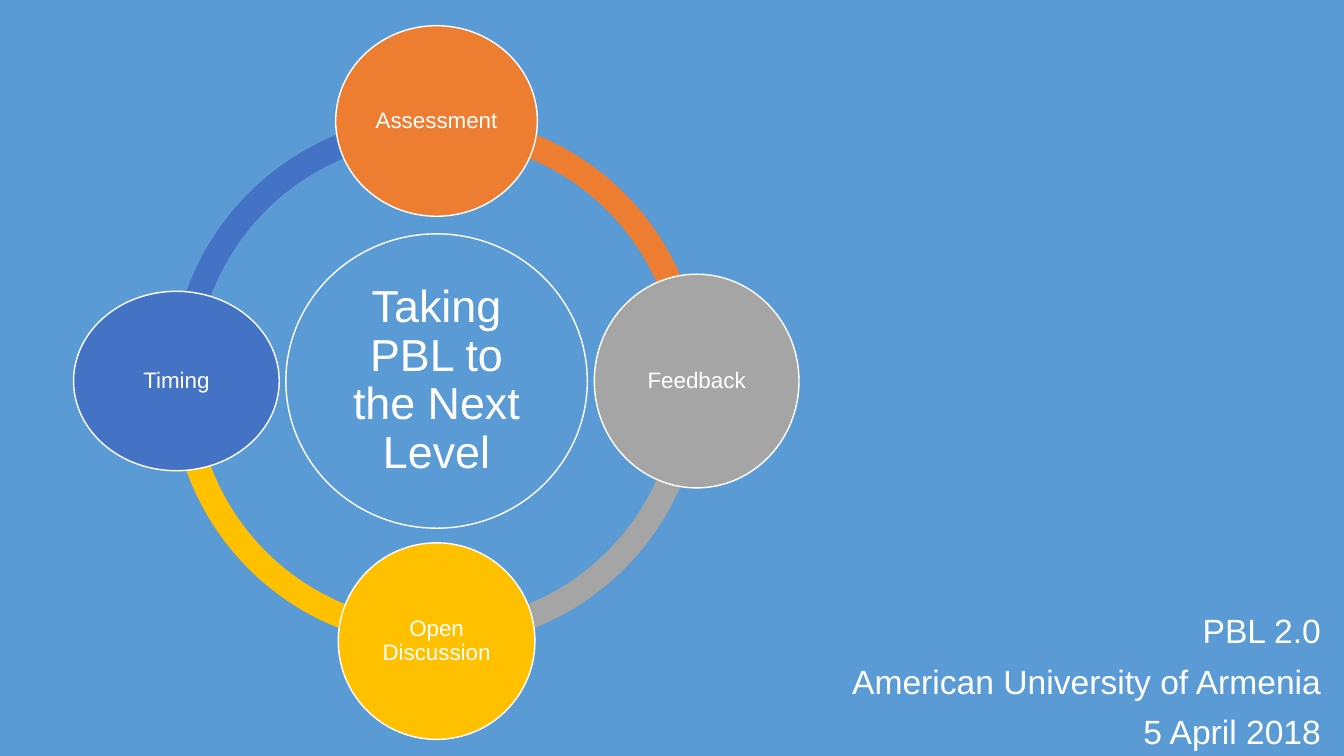
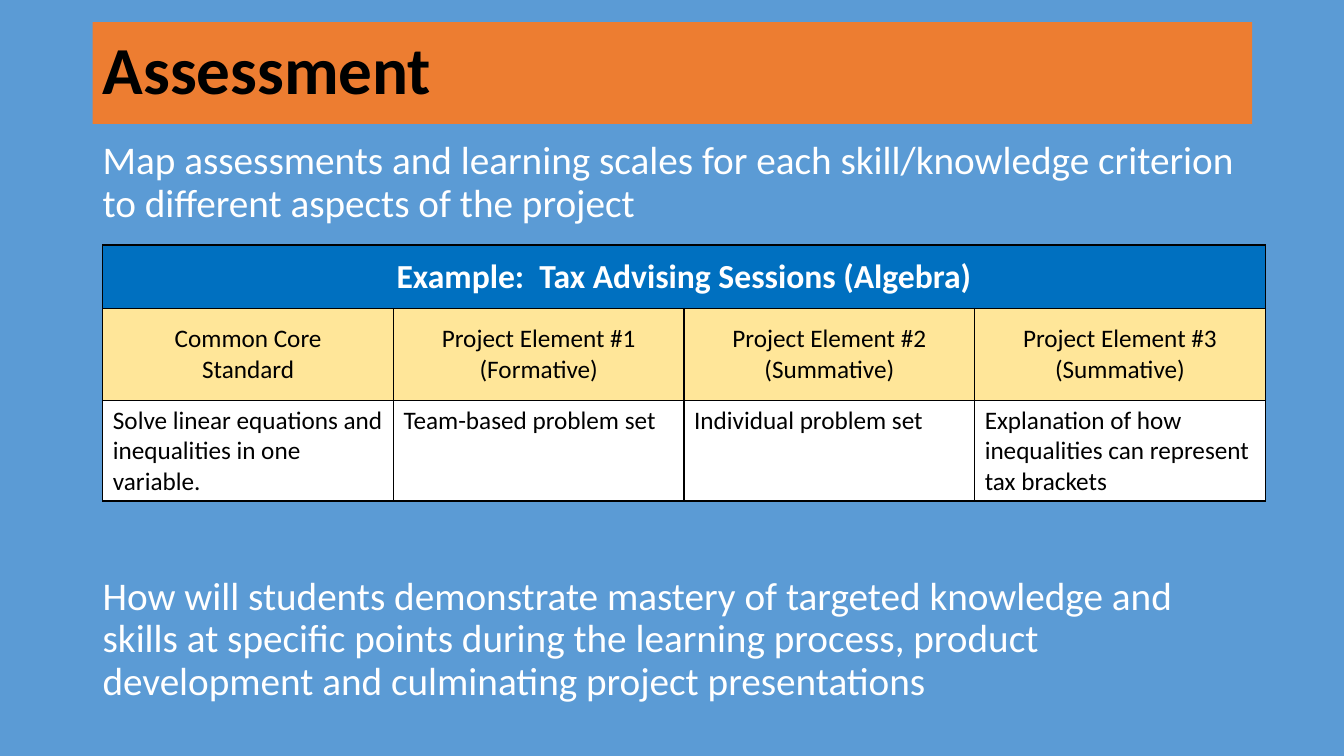
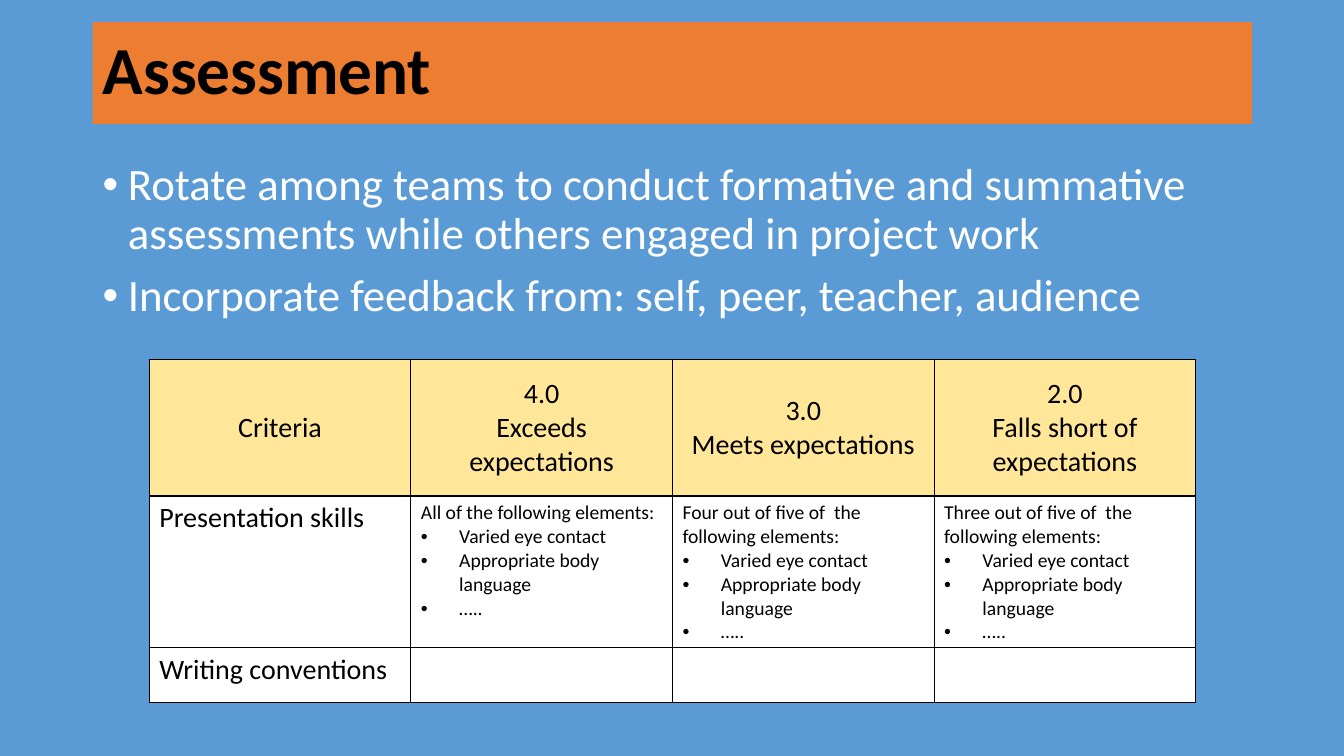
from dataclasses import dataclass

from lxml import etree
from pptx import Presentation
from pptx import util as u
from pptx.dml.color import RGBColor
from pptx.enum import shapes, text
from pptx.oxml.ns import qn

BLUE, ORANGE, GRAY, GOLD, INDIGO = "5B9BD5", "ED7D31", "A5A5A5", "FFC000", "4472C4"
NAVY, CREAM, WHITE, BLACK = "0070C0", "FFE699", "FFFFFF", "000000"
LEFT, CENTER, RIGHT = text.PP_ALIGN.LEFT, text.PP_ALIGN.CENTER, text.PP_ALIGN.RIGHT
BULLET = "• "


def rgb(hex_color):
    return RGBColor.from_string(hex_color)


def inches(values):
    return [u.Inches(v) for v in values]


@dataclass
class Font:
    size: float
    color: str = WHITE
    name: str = "Calibri"
    bold: bool = False


@dataclass
class Row:
    """One table row: cells hold lists of paragraphs; first sets the leading cell's font."""
    height: float
    fill: str
    font: Font
    cells: list
    first: Font = None
    heading: bool = False


class Deck:
    def __init__(self):
        self.prs = Presentation()
        self.prs.slide_width, self.prs.slide_height = inches((13.33, 7.5))

    def new_slide(self, title=None):
        self.s = self.prs.slides.add_slide(self.prs.slide_layouts[6])
        self.s.background.fill.solid()
        self.s.background.fill.fore_color.rgb = rgb(BLUE)
        if title:
            band = self.shape(shapes.MSO_SHAPE.RECTANGLE, (0.92, 0.22, 11.5, 1.01), ORANGE)
            self.add_text(band.text_frame, [title], Font(48, BLACK, bold=True), spacing=0.9)

    def shape(self, kind, at, fill, line=None):
        sp = self.s.shapes.add_shape(kind, *inches(at))
        sp.shadow.inherit = False
        sp.fill.solid()
        sp.fill.fore_color.rgb = rgb(fill)
        if line:
            sp.line.color.rgb = rgb(line)
            sp.line.width = u.Pt(1)
        else:
            sp.line.fill.background()
        return sp

    def add_text(self, tf, paragraphs, font, align=LEFT, spacing=None, before=None, indent=0.25):
        """Fill a text frame; paragraphs that start with a bullet get a hanging indent."""
        tf.word_wrap = True
        for i, words in enumerate(paragraphs):
            p = tf.add_paragraph() if i else tf.paragraphs[0]
            p.alignment = align
            if spacing:
                p.line_spacing = spacing
            if before:
                p.space_before = u.Pt(before)
            if words.startswith(BULLET):
                words = words[len(BULLET):]
                pPr = p._p.get_or_add_pPr()
                pPr.set("marL", str(u.Inches(indent)))
                pPr.set("indent", str(-u.Inches(indent)))
                etree.SubElement(pPr, qn("a:buFont")).set("typeface", "Arial")
                etree.SubElement(pPr, qn("a:buChar")).set("char", BULLET.strip())
            r = p.add_run()
            r.text = words
            r.font.size = u.Pt(font.size)
            r.font.name = font.name
            r.font.bold = font.bold
            r.font.color.rgb = rgb(font.color)

    def textbox(self, at, paragraphs, font, align=LEFT):
        tf = self.s.shapes.add_textbox(*inches(at)).text_frame
        self.add_text(tf, paragraphs, font, align, spacing=0.9, before=10)

    def arc(self, at, start, end, fill):
        sp = self.shape(shapes.MSO_SHAPE.BLOCK_ARC, at, fill)
        for i, value in enumerate((start, end, 0.046)):
            sp.adjustments[i] = value

    def circle(self, center, size, fill, label, font_size, inset):
        (x, y), (w, h) = center, size
        sp = self.shape(shapes.MSO_SHAPE.OVAL, (x - w / 2, y - h / 2, w, h), fill, WHITE)
        tf = sp.text_frame
        tf.margin_left = tf.margin_right = tf.margin_top = tf.margin_bottom = u.Inches(inset)
        self.add_text(tf, [label], Font(font_size, name="Arial"), CENTER, spacing=0.9)

    def border(self, cell):
        tcPr = cell._tc.get_or_add_tcPr()
        for side in ("lnL", "lnR", "lnT", "lnB"):
            ln = etree.SubElement(tcPr, qn("a:" + side), w=str(u.Pt(1)))
            fill = etree.SubElement(ln, qn("a:solidFill"))
            etree.SubElement(fill, qn("a:srgbClr"), val=BLACK)

    def table(self, left, top, width, rows, columns=4):
        height = sum(row.height for row in rows)
        frame = self.s.shapes.add_table(len(rows), columns, *inches((left, top, width, height)))
        tbl = frame.table
        tbl.first_row = tbl.horz_banding = False
        for i, row in enumerate(rows):
            tbl.rows[i].height = u.Inches(row.height)
            for j in range(columns):
                cell = tbl.cell(i, j)
                self.border(cell)
                cell.fill.solid()
                cell.fill.fore_color.rgb = rgb(row.fill)
                if row.heading:
                    cell.vertical_anchor = text.MSO_ANCHOR.MIDDLE
                if j < len(row.cells):
                    font = row.first if row.first and j == 0 else row.font
                    self.add_text(cell.text_frame, row.cells[j], font,
                                  CENTER if row.heading else LEFT, indent=0.38)
            if len(row.cells) == 1 and row.heading:
                tbl.cell(i, 0).merge(tbl.cell(i, columns - 1))


def cover(deck):
    deck.new_slide()
    x, y, radius, ring = 4.33, 3.78, 2.58, 5.27
    ring_at = (x - ring / 2, y - ring / 2, ring, ring)
    for start, end, fill in ((108, 162, INDIGO), (54, 108, GOLD), (0, 54, GRAY), (162, 0, ORANGE)):
        deck.arc(ring_at, start, end, fill)
    deck.circle((x, y), (2.99, 2.92), BLUE, "Taking PBL to the Next Level", 32, 0.04)
    topics = (
        ("Assessment", 0, -1, (2, 1.89), ORANGE),
        ("Feedback", 1, 0, (2.03, 2.12), GRAY),
        ("Open Discussion", 0, 1, (1.95, 1.95), GOLD),
        ("Timing", -1, 0, (2.04, 1.78), INDIGO),
    )
    for label, dx, dy, size, fill in topics:
        deck.circle((x + dx * radius, y + dy * radius), size, fill, label, 16, 0.02)
    deck.textbox((3.2, 6.05, 10, 1.81),
                 ["PBL 2.0", "American University of Armenia", "5 April 2018"],
                 Font(24, name="Arial"), RIGHT)


def assessment_map(deck):
    deck.new_slide("Assessment")
    deck.textbox((0.92, 1.35, 11.5, 1), [
        "Map assessments and learning scales for each skill/knowledge criterion "
        "to different aspects of the project"], Font(28))
    deck.textbox((0.92, 5.67, 11.5, 1.4), [
        "How will students demonstrate mastery of targeted knowledge and skills at specific "
        "points during the learning process, product development and culminating project "
        "presentations"], Font(28))
    body = Font(18, BLACK)
    elements = [[f"Project Element #{n}", f"({kind})"]
                for n, kind in enumerate(("Formative", "Summative", "Summative"), 1)]
    deck.table(1.02, 2.43, 11.53, [
        Row(0.63, NAVY, Font(24, bold=True),
            [["Example:  Tax Advising Sessions (Algebra)"]], heading=True),
        Row(0.91, CREAM, body, [["Common Core", "Standard"]] + elements, heading=True),
        Row(1, WHITE, body, [
            ["Solve linear equations and inequalities in one variable."],
            ["Team-based problem set"],
            ["Individual problem set"],
            ["Explanation of how inequalities can represent tax brackets"]]),
    ])


def assessment_rubric(deck):
    deck.new_slide("Assessment")
    deck.textbox((0.92, 1.56, 11.5, 1.9), [
        BULLET + "Rotate among teams to conduct formative and summative assessments "
        "while others engaged in project work",
        BULLET + "Incorporate feedback from: self, peer, teacher, audience"], Font(32))
    large = Font(20, BLACK)
    skills = [BULLET + skill for skill in ("Varied eye contact", "Appropriate body language", "…..")]
    scopes = ("All of the", "Four out of five of  the", "Three out of five of  the")
    deck.table(1.48, 3.57, 10.38, [
        Row(1.35, CREAM, large, [
            ["Criteria"],
            ["4.0", "Exceeds expectations"],
            ["3.0", "Meets expectations"],
            ["2.0", "Falls short of expectations"]], heading=True),
        Row(1.5, WHITE, Font(14, BLACK),
            [["Presentation skills"]] + [[f"{scope} following elements:"] + skills for scope in scopes],
            first=large),
        Row(0.55, WHITE, large, [["Writing conventions"]]),
    ])


def main():
    deck = Deck()
    cover(deck)
    assessment_map(deck)
    assessment_rubric(deck)
    deck.prs.save("out.pptx")


if __name__ == "__main__":
    main()
